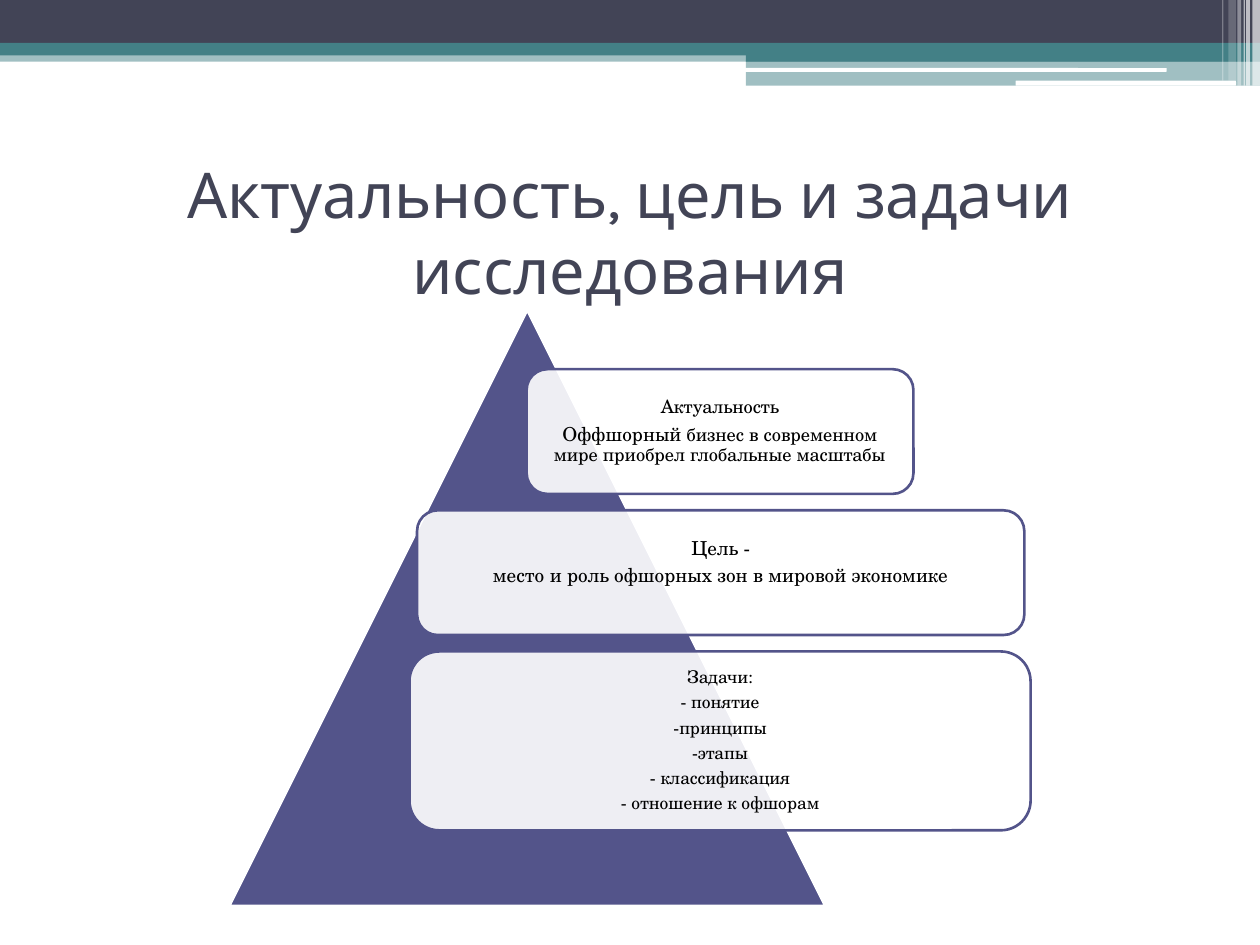
from dataclasses import dataclass

from lxml import etree
from pptx import Presentation
from pptx import util as u
from pptx.dml.color import RGBColor
from pptx.enum import shapes, text
from pptx.oxml.ns import qn


@dataclass(frozen=True)
class Theme:
    navy: str = "424456"
    teal: str = "438086"
    violet: str = "53548A"
    white: str = "FFFFFF"
    black: str = "000000"
    title_font: str = "Karla"
    body_font: str = "TeX Gyre Schola"
    title_size: float = 36
    large_size: float = 11
    medium_size: float = 10.5
    small_size: float = 10
    outline: float = 1.5


THEME = Theme()
SHAPE = shapes.MSO_SHAPE


def add_panel(slide, kind, box, fill, opacity=100, line=None):
    panel = slide.shapes.add_shape(kind, *map(u.Inches, box))
    panel.shadow.inherit = False
    panel.fill.solid()
    panel.fill.fore_color.rgb = RGBColor.from_string(fill)
    if opacity < 100:
        color = panel.fill._xPr.find(qn("a:solidFill"))[0]
        etree.SubElement(color, qn("a:alpha"), val=str(opacity * 1000))
    if line:
        panel.line.color.rgb = RGBColor.from_string(line)
        panel.line.width = u.Pt(THEME.outline)
    else:
        panel.line.fill.background()
    return panel


def write_text(frame, paragraphs, font, color, inset=0.05, bottom=None,
               line_spacing=1.0, space_ratio=0):
    frame.word_wrap = True
    frame.vertical_anchor = text.MSO_ANCHOR.MIDDLE
    frame.margin_left = frame.margin_right = frame.margin_top = u.Inches(inset)
    frame.margin_bottom = u.Inches(inset if bottom is None else bottom)
    for index, runs in enumerate(paragraphs):
        paragraph = frame.add_paragraph() if index else frame.paragraphs[0]
        paragraph.alignment = text.PP_ALIGN.CENTER
        paragraph.line_spacing = line_spacing
        paragraph.space_after = u.Pt(round(runs[-1][1] * space_ratio, 1))
        for words, size in runs:
            run = paragraph.add_run()
            run.text = words
            run.font.name = font
            run.font.size = u.Pt(size)
            run.font.color.rgb = RGBColor.from_string(color)


def add_header(slide):
    bands = [
        (0, 0.4, 10, 0.09, THEME.teal, 50),
        (0, 0, 10, 0.34, THEME.navy, 100),
        (0, 0.34, 10, 0.1, THEME.teal, 100),
        (5.92, 0.39, 4.08, 0.1, THEME.teal, 100),
        (5.92, 0.48, 4.08, 0.2, THEME.teal, 50),
    ]
    for *box, color, opacity in bands:
        add_panel(slide, SHAPE.RECTANGLE, box, color, opacity)
    for box in [(5.91, 0.54, 3.35, 0.03), (8.06, 0.64, 1.75, 0.04)]:
        add_panel(slide, SHAPE.ROUNDED_RECTANGLE, box, THEME.white)
    stripes = [
        (9.94, 0.06, 0.68, 65),
        (9.89, 0.03, 0.68, 65),
        (9.87, 0.01, 0.68, 60),
        (9.82, 0.03, 0.68, 40),
        (9.75, 0.06, 0.64, 20),
        (9.7, 0.01, 0.64, 30),
    ]
    for left, width, height, opacity in stripes:
        add_panel(slide, SHAPE.RECTANGLE, (left, 0, width, height),
                  THEME.white, opacity)


def add_title(slide, words):
    title = slide.shapes.add_textbox(*map(u.Inches, (0.5, 1.25, 9, 1.17)))
    write_text(title.text_frame, [[(words, THEME.title_size)]],
               THEME.title_font, THEME.navy, inset=0.1, bottom=0.1)


def add_card(slide, box, paragraphs, **layout):
    card = add_panel(slide, SHAPE.ROUNDED_RECTANGLE, box, THEME.white, 90,
                     THEME.violet)
    write_text(card.text_frame, paragraphs, THEME.body_font, THEME.black,
               line_spacing=0.9, space_ratio=0.35, **layout)


def main():
    deck = Presentation()
    deck.slide_width, deck.slide_height = u.Inches(10), u.Inches(7.5)
    slide = deck.slides.add_slide(deck.slide_layouts[6])
    add_header(slide)
    add_title(slide, "Актуальность, цель и задачи исследования")
    add_panel(slide, SHAPE.ISOSCELES_TRIANGLE, (1.82, 2.46, 4.73, 4.73),
              THEME.violet, line=THEME.white)

    relevance = [
        [("Актуальность", THEME.medium_size)],
        [("Оффшорный", THEME.large_size),
         (" бизнес в современном мире приобрел глобальные масштабы",
          THEME.medium_size)],
    ]
    goal = [[(words, THEME.large_size)] for words in
            ("Цель -", "место и роль офшорных зон в мировой экономике")]
    tasks = [[(words, THEME.small_size)] for words in
             ("Задачи:", "- понятие", "-принципы", "-этапы",
              "- классификация", "- отношение к офшорам")]
    add_card(slide, (4.18, 2.93, 3.07, 0.99), relevance)
    add_card(slide, (3.31, 4.05, 4.82, 0.99), goal, bottom=0.21)
    add_card(slide, (3.25, 5.17, 4.93, 1.42), tasks, inset=0.04)
    deck.save("out.pptx")


if __name__ == "__main__":
    main()
